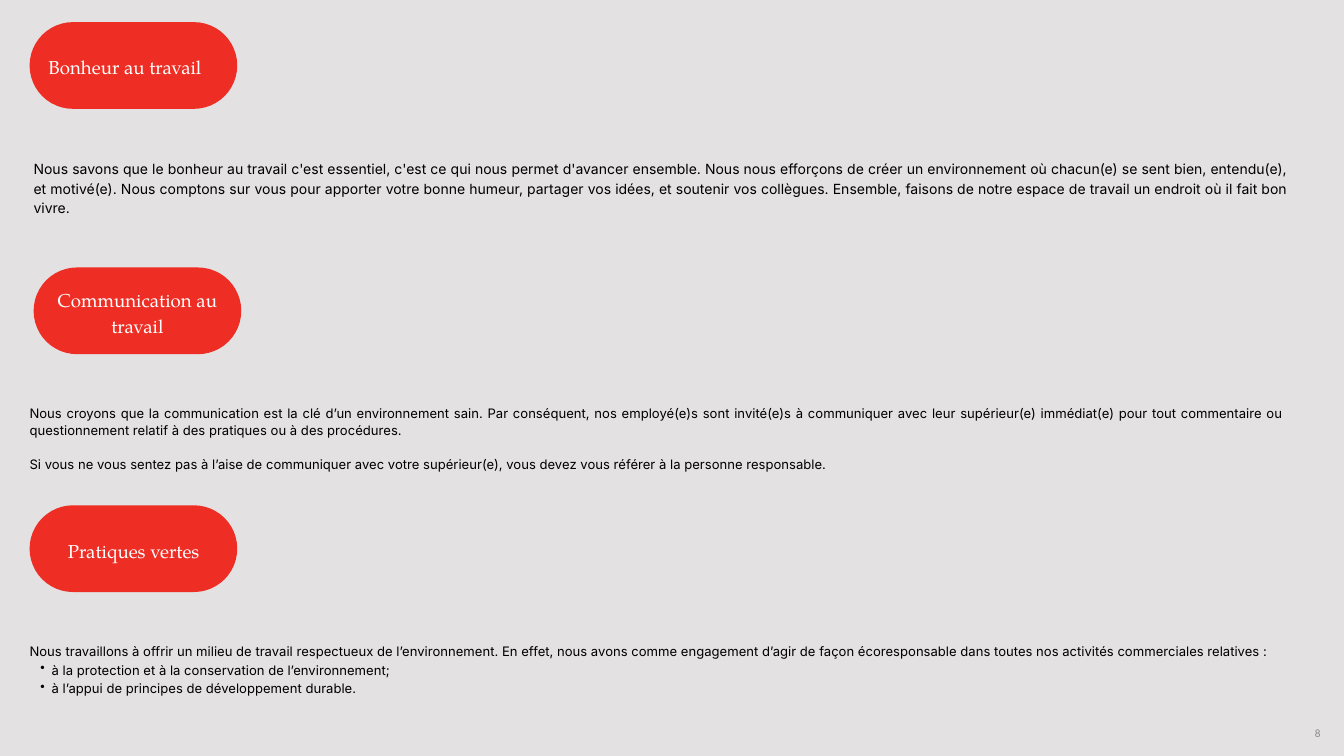
import pptx
import pptx.util
import pptx.dml.color
import pptx.enum.shapes
import pptx.enum.text
import lxml.etree
import pptx.oxml.ns

RGBColor = pptx.dml.color.RGBColor
GREY = RGBColor(0xE3, 0xE1, 0xE1)
RED = RGBColor(0xEE, 0x2E, 0x24)
WHITE = RGBColor(0xFF, 0xFF, 0xFF)
BLACK = RGBColor(0x00, 0x00, 0x00)
DIM = RGBColor(0x8C, 0x8C, 0x8C)
ALIGN = pptx.enum.text.PP_ALIGN
FIT = pptx.enum.text.MSO_AUTO_SIZE.SHAPE_TO_FIT_TEXT

deck = pptx.Presentation()
deck.slide_width = pptx.util.Inches(20)
deck.slide_height = pptx.util.Inches(11.25)
COL = deck.slide_width / 100
ROW = deck.slide_height / 100
slide = deck.slides.add_slide(deck.slide_layouts[6])
slide.background.fill.solid()
slide.background.fill.fore_color.rgb = GREY


def place(x, y, w, h):
    return int(x * COL), int(y * ROW), int(w * COL), int(h * ROW)


def write(box, lines, font, size, color, align, lead):
    frame = slide.shapes.add_textbox(*place(*box)).text_frame
    frame.word_wrap = True
    frame.auto_size = FIT
    frame.margin_left = frame.margin_right = 0
    frame.margin_top = frame.margin_bottom = 0
    for i, (line, gap, dot) in enumerate(lines):
        para = frame.add_paragraph() if i else frame.paragraphs[0]
        para.text = line
        para.alignment = align
        para.line_spacing = pptx.util.Pt(lead)
        para.space_before = pptx.util.Pt(gap)
        if dot:
            para.level = 1
            props = para._p.get_or_add_pPr()
            props.set("marL", str(pptx.util.Inches(0.33)))
            props.set("indent", str(pptx.util.Inches(-0.17)))
            mark = lxml.etree.SubElement(props, pptx.oxml.ns.qn("a:buChar"))
            mark.set("char", "•")
        para.font.name = font
        para.font.size = pptx.util.Pt(size)
        para.font.color.rgb = color


heads = [
    (2.2, 2.93, "Bonheur au travail", (2.5, 6.84, 13.6, 3.2)),
    (2.5, 35.38, "Communication au travail", (2.95, 37.69, 14.55, 6.58)),
    (2.2, 66.84, "Pratiques vertes", (4.1, 70.93, 11.7, 3.11)),
]
for x, y, title, box in heads:
    pill = slide.shapes.add_shape(
        pptx.enum.shapes.MSO_SHAPE.ROUNDED_RECTANGLE, *place(x, y, 15.45, 11.47))
    pill.adjustments[0] = 0.5
    pill.shadow.inherit = False
    pill.fill.solid()
    pill.fill.fore_color.rgb = RED
    pill.line.fill.background()
    write(box, [(title, 0, False)], "TeX Gyre Pagella", 20, WHITE, ALIGN.CENTER, 28)

joy = [
    ("Nous savons que le bonheur au travail c'est essentiel, c'est ce qui nous permet "
     "d'avancer ensemble. Nous nous efforçons de créer un environnement où chacun(e) se "
     "sent bien, entendu(e), et motivé(e). Nous comptons sur vous pour apporter votre bonne "
     "humeur, partager vos idées, et soutenir vos collègues. Ensemble, faisons de notre "
     "espace de travail un endroit où il fait bon vivre.", 0, False),
]
talk = [
    ("Nous croyons que la communication est la clé d’un environnement sain. Par conséquent, "
     "nos employé(e)s sont invité(e)s à communiquer avec leur supérieur(e) immédiat(e) pour "
     "tout commentaire ou questionnement relatif à des pratiques ou à des procédures.",
     0, False),
    ("Si vous ne vous sentez pas à l’aise de communiquer avec votre supérieur(e), vous devez "
     "vous référer à la personne responsable.", 18.2, False),
]
green = [
    ("Nous travaillons à offrir un milieu de travail respectueux de l’environnement. En "
     "effet, nous avons comme engagement d’agir de façon écoresponsable dans toutes nos "
     "activités commerciales relatives :", 0, False),
    ("à la protection et à la conservation de l’environnement;", 0, True),
    ("à l’appui de principes de développement durable.", 0, True),
]
bodies = [
    (2.5, 20.89, 7.64, joy, 15, ALIGN.JUSTIFY, 21),
    (2.2, 53.42, 8.8, talk, 14, ALIGN.JUSTIFY, 18.2),
    (2.2, 84.8, 7.29, green, 14, ALIGN.LEFT, 19.6),
]
for x, y, h, lines, size, align, lead in bodies:
    write((x, y, 93.35, h), lines, "Inter", size, BLACK, align, lead)

foot = slide.shapes.add_textbox(*place(87.1, 95.2, 11.65, 3.56)).text_frame
foot.word_wrap = True
foot.vertical_anchor = pptx.enum.text.MSO_ANCHOR.MIDDLE
page = foot.paragraphs[0]
page.text = "8"
page.alignment = ALIGN.RIGHT
page.font.name = "Calibri"
page.font.size = pptx.util.Pt(12)
page.font.color.rgb = DIM

deck.save("out.pptx")
